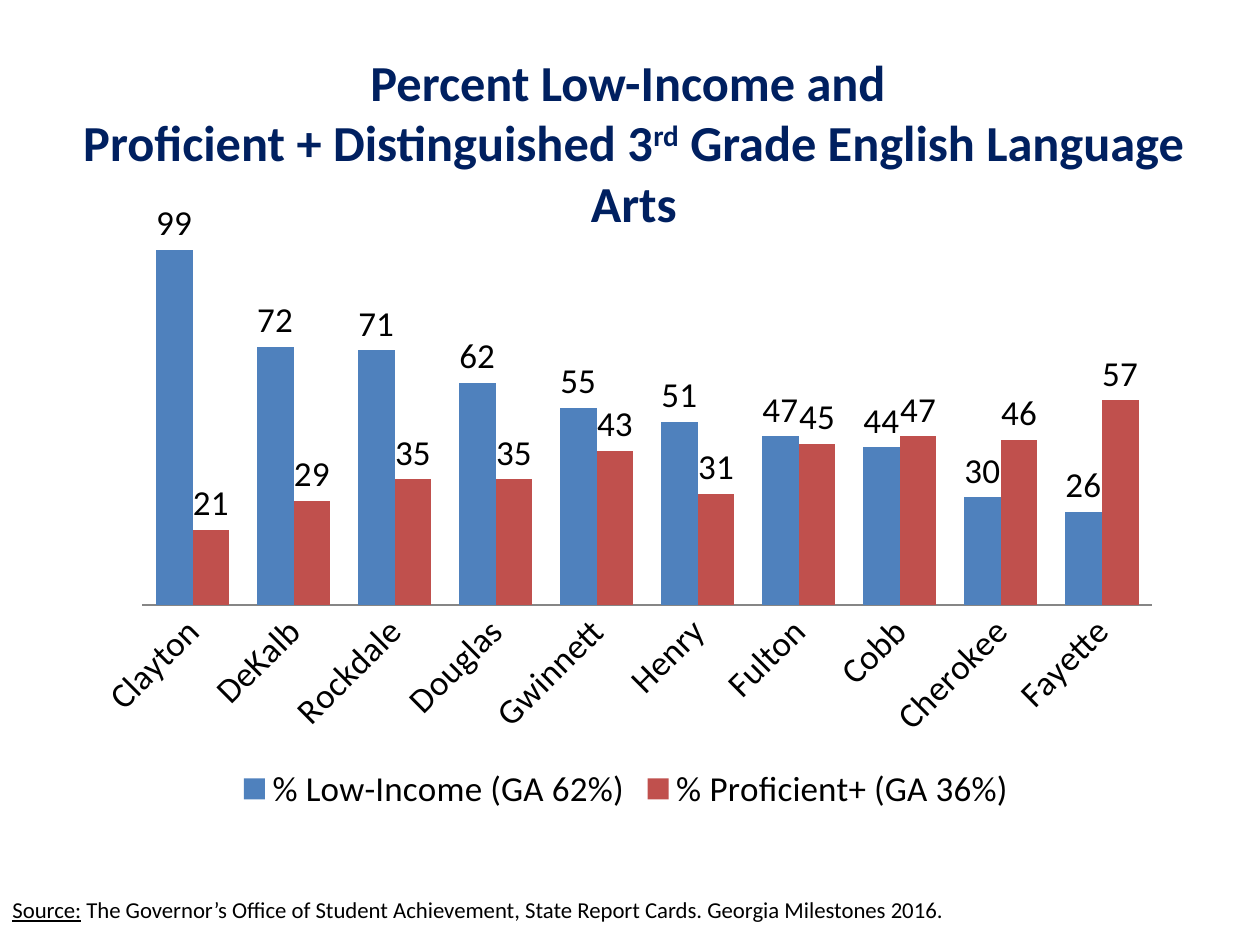
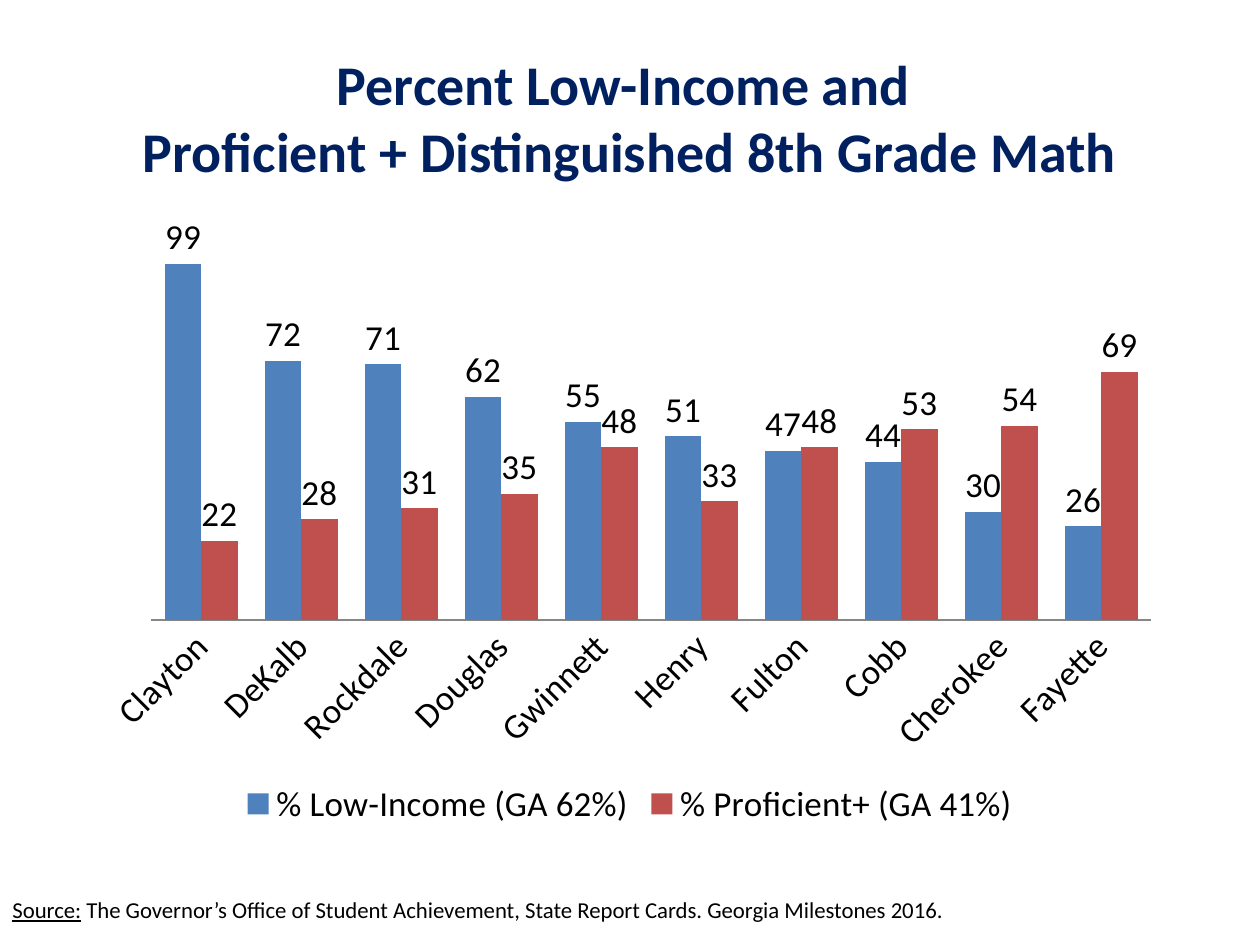
"""Build two county slides comparing low-income share with test proficiency."""
import pptx
import pptx.chart.data
import pptx.dml.color
import pptx.enum.chart
import pptx.enum.text
import pptx.util

Pt = pptx.util.Pt
FONT = "Calibri"
COLORS = {"title": "002060", "text": "000000", "low": "4F81BD",
          "skill": "C0504D", "axis": "868686"}
COUNTIES = ["Clayton", "DeKalb", "Rockdale", "Douglas", "Gwinnett",
            "Henry", "Fulton", "Cobb", "Cherokee", "Fayette"]
LOW = ("% Low-Income (GA 62%)", [99, 72, 71, 62, 55, 51, 47, 44, 30, 26])
HEAD = "Percent Low-Income and "
SOURCE = [("Source:", {"under": True}),
          (" The Governor’s Office of Student Achievement, State Report Cards. "
           "Georgia Milestones 2016.", {})]
SLIDES = [
    {"title": [("Proficient + Distinguished 3", {}), ("rd", {"base": 30000}),
               (" Grade English Language Arts", {})],
     "size": 28.8, "box": (26, 29, 672.5, 104), "plot": (44.6, 92.2, 626.4, 375),
     "skill": ("% Proficient+ (GA 36%)", [21, 29, 35, 35, 43, 31, 45, 47, 46, 57])},
    {"title": [("Proficient + Distinguished 8th Grade Math", {})],
     "size": 32, "box": (36, 21.6, 648, 90), "plot": (49.7, 100, 620.6, 375.8),
     "skill": ("% Proficient+ (GA 41%)", [22, 28, 31, 35, 48, 33, 48, 53, 54, 69])},
]


def tint(name):
    return pptx.dml.color.RGBColor.from_string(COLORS[name])


def style(font, size, color, bold=False):
    font.name, font.size, font.bold = FONT, Pt(size), bold
    font.color.rgb = tint(color)


def add_run(para, text, size, color, bold=False, under=False, base=0):
    run = para.add_run()
    run.text = text
    style(run.font, size, color, bold)
    if under:
        run.font.underline = True
    if base:
        run.font._element.set("baseline", str(base))


def add_box(slide, box):
    frame = slide.shapes.add_textbox(*map(Pt, box)).text_frame
    frame.word_wrap = True
    return frame, frame.paragraphs[0]


def add_title(slide, page):
    frame, para = add_box(slide, page["box"])
    frame.vertical_anchor = pptx.enum.text.MSO_ANCHOR.MIDDLE
    para.alignment = pptx.enum.text.PP_ALIGN.CENTER
    add_run(para, HEAD, page["size"], "title", True)
    para.add_line_break()
    for text, look in page["title"]:
        add_run(para, text, page["size"], "title", True, **look)


def add_source(slide):
    frame, para = add_box(slide, (0, 514, 630, 16.6))
    frame.auto_size = pptx.enum.text.MSO_AUTO_SIZE.SHAPE_TO_FIT_TEXT
    para.line_spacing = 0.6
    for text, look in SOURCE:
        add_run(para, text, 13, "text", **look)


def add_bars(slide, page):
    kinds = pptx.enum.chart
    data = pptx.chart.data.CategoryChartData(number_format="0")
    data.categories = COUNTIES
    for name, vals in (LOW, page["skill"]):
        data.add_series(name, vals)
    chart = slide.shapes.add_chart(kinds.XL_CHART_TYPE.COLUMN_CLUSTERED,
                                   *map(Pt, page["plot"]), data).chart
    style(chart.font, 20, "text")
    chart.has_title = False
    chart.has_legend = True
    chart.legend.position = kinds.XL_LEGEND_POSITION.BOTTOM
    chart.legend.include_in_layout = False

    scale = chart.value_axis
    scale.minimum_scale, scale.maximum_scale = 0, 120
    scale.has_major_gridlines = False
    scale.visible = False
    axis = chart.category_axis
    axis.major_tick_mark = kinds.XL_TICK_MARK.NONE
    axis.format.line.color.rgb = tint("axis")
    style(axis.tick_labels.font, 20, "text")
    axis._element.txPr.bodyPr.set("rot", "-2700000")

    plot = chart.plots[0]
    plot.gap_width, plot.overlap = 75, 0
    plot.vary_by_categories = False
    for bars, color in zip(plot.series, ("low", "skill")):
        bars.format.fill.solid()
        bars.format.fill.fore_color.rgb = tint(color)
        labels = bars.data_labels
        labels.show_value = True
        labels.number_format, labels.number_format_is_linked = "0", False
        labels.position = kinds.XL_LABEL_POSITION.OUTSIDE_END
        style(labels.font, 20, "text")


def main():
    deck = pptx.Presentation()
    deck.slide_width, deck.slide_height = Pt(720), Pt(540)
    for page in SLIDES:
        slide = deck.slides.add_slide(deck.slide_layouts[6])
        add_title(slide, page)
        add_source(slide)
        add_bars(slide, page)
    deck.save("out.pptx")


if __name__ == "__main__":
    main()
